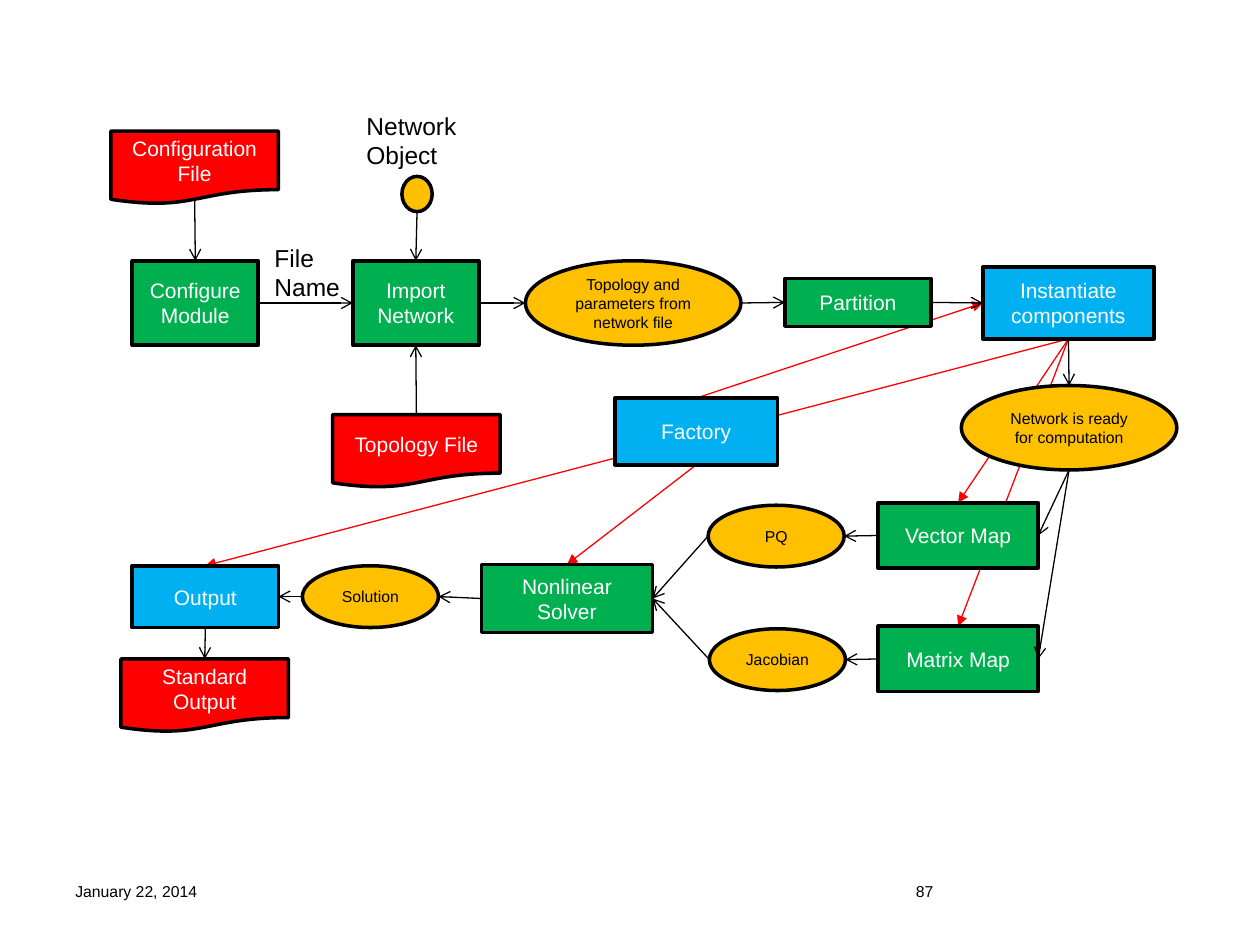
from dataclasses import dataclass
from typing import NamedTuple

from lxml import etree
from pptx import Presentation
from pptx.dml.color import RGBColor
from pptx.enum import shapes, text
from pptx.oxml import ns
from pptx.util import Inches, Pt


@dataclass(frozen=True)
class Theme:
    font: str = "Arial"
    black: str = "000000"
    white: str = "FFFFFF"
    red: str = "FF0000"
    green: str = "00B050"
    blue: str = "00B0F0"
    amber: str = "FFC000"
    label_size: int = 14
    node_size: int = 12
    small_size: int = 9
    outline: float = 2
    arrow: float = 0.75


THEME = Theme()
KIND = shapes.MSO_SHAPE


class Style(NamedTuple):
    shape: KIND
    fill: str
    color: str
    size: int


class Node(NamedTuple):
    style: Style
    label: str
    left: float
    top: float
    width: float
    height: float

    def side(self, name: str) -> tuple[float, float]:
        bottom = 0.94 if self.style.shape == KIND.FLOWCHART_DOCUMENT else 1
        across, down = {"top": (0.5, 0), "left": (0, 0.5),
                        "bottom": (0.5, bottom), "right": (1, 0.5)}[name]
        return self.left + across * self.width, self.top + down * self.height


class Link(NamedTuple):
    source: str
    source_side: str
    target: str
    target_side: str


class Label(NamedTuple):
    lines: tuple[str, ...]
    left: float
    top: float
    width: float
    height: float
    size: int
    wrap: bool = True


FILE = Style(KIND.FLOWCHART_DOCUMENT, THEME.red, THEME.white, THEME.node_size)
PROCESS = Style(KIND.FLOWCHART_PROCESS, THEME.green, THEME.white, THEME.node_size)
STEP = Style(KIND.RECTANGLE, THEME.green, THEME.white, THEME.node_size)
FACTORY = Style(KIND.RECTANGLE, THEME.blue, THEME.white, THEME.node_size)
STATE = Style(KIND.OVAL, THEME.amber, THEME.black, THEME.small_size)

FILE_BOX = (1.33, 0.58)
PROCESS_BOX = (1, 0.67)
MAP_BOX = (1.27, 0.52)
WIDE_OVAL = (1.71, 0.67)
OVAL = (1.08, 0.49)

NODES = {
    "config file": Node(FILE, "Configuration File", 0.88, 1.04, *FILE_BOX),
    "topology file": Node(FILE, "Topology File", 2.64, 3.29, *FILE_BOX),
    "configure": Node(PROCESS, "Configure Module", 1.05, 2.07, *PROCESS_BOX),
    "import": Node(PROCESS, "Import Network", 2.8, 2.07, *PROCESS_BOX),
    "network object": Node(STATE, "", 3.19, 1.4, 0.24, 0.28),
    "topology": Node(STATE, "Topology and parameters from network file",
                     4.17, 2.07, *WIDE_OVAL),
    "instantiate": Node(FACTORY, "Instantiate components", 7.8, 2.12, 1.36, 0.57),
    "ready": Node(STATE, "Network is ready for computation", 7.63, 3.06, *WIDE_OVAL),
    "partition": Node(STEP, "Partition", 6.23, 2.21, 1.16, 0.38),
    "vector map": Node(STEP, "Vector Map", 6.97, 3.99, *MAP_BOX),
    "matrix map": Node(STEP, "Matrix Map", 6.97, 4.97, *MAP_BOX),
    "pq": Node(STATE, "PQ", 5.62, 4.01, *OVAL),
    "jacobian": Node(STATE, "Jacobian", 5.63, 4.99, *OVAL),
    "solver": Node(STEP, "Nonlinear Solver", 3.82, 4.48, 1.36, 0.54),
    "solution": Node(STATE, "Solution", 2.4, 4.49, *OVAL),
    "factory": Node(FACTORY, "Factory", 4.88, 3.16, 1.29, 0.53),
    "output": Node(FACTORY, "Output", 1.05, 4.49, 1.16, 0.49),
    "standard output": Node(FILE, "Standard Output", 0.96, 5.23, *FILE_BOX),
}

FACTORY_LINKS = [
    Link("instantiate", "bottom", "output", "top"),
    Link("factory", "top", "instantiate", "left"),
    Link("instantiate", "bottom", "vector map", "top"),
    Link("instantiate", "bottom", "matrix map", "top"),
    Link("factory", "bottom", "solver", "top"),
]

FLOW_LINKS = [
    Link("config file", "bottom", "configure", "top"),
    Link("configure", "right", "import", "left"),
    Link("topology file", "top", "import", "bottom"),
    Link("network object", "bottom", "import", "top"),
    Link("import", "right", "topology", "left"),
    Link("topology", "right", "partition", "left"),
    Link("partition", "right", "instantiate", "left"),
    Link("instantiate", "bottom", "ready", "top"),
    Link("ready", "bottom", "vector map", "right"),
    Link("ready", "bottom", "matrix map", "right"),
    Link("vector map", "left", "pq", "right"),
    Link("matrix map", "left", "jacobian", "right"),
    Link("pq", "left", "solver", "right"),
    Link("jacobian", "left", "solver", "right"),
    Link("solver", "left", "solution", "right"),
    Link("solution", "left", "output", "right"),
    Link("output", "bottom", "standard output", "top"),
]

LABELS = [
    Label(("File", "Name"), 2.08, 1.88, 0.74, 0.57, THEME.label_size, False),
    Label(("Network Object",), 2.81, 0.83, 1.03, 0.57, THEME.label_size),
    Label(("January 22, 2014",), 0.5, 6.95, 2.33, 0.4, THEME.small_size),
    Label(("87",), 7.17, 6.95, 2.33, 0.4, THEME.small_size),
]


def style_paragraph(paragraph, size: int, color: str) -> None:
    paragraph.font.name = THEME.font
    paragraph.font.size = Pt(size)
    paragraph.font.color.rgb = RGBColor.from_string(color)


def draw_node(slide, node: Node) -> None:
    shape = slide.shapes.add_shape(
        node.style.shape, Inches(node.left), Inches(node.top),
        Inches(node.width), Inches(node.height))
    shape.shadow.inherit = False
    shape.fill.solid()
    shape.fill.fore_color.rgb = RGBColor.from_string(node.style.fill)
    shape.line.color.rgb = RGBColor.from_string(THEME.black)
    shape.line.width = Pt(THEME.outline)
    if node.label:
        frame = shape.text_frame
        frame.word_wrap = True
        frame.vertical_anchor = text.MSO_ANCHOR.MIDDLE
        paragraph = frame.paragraphs[0]
        paragraph.text = node.label
        paragraph.alignment = text.PP_ALIGN.CENTER
        style_paragraph(paragraph, node.style.size, node.style.color)


def draw_link(slide, link: Link, color: str, head: str) -> None:
    start = NODES[link.source].side(link.source_side)
    end = NODES[link.target].side(link.target_side)
    connector = slide.shapes.add_connector(
        shapes.MSO_CONNECTOR.STRAIGHT, *map(Inches, start + end))
    connector.line.color.rgb = RGBColor.from_string(color)
    connector.line.width = Pt(THEME.arrow)
    properties = connector._element.spPr
    etree.SubElement(properties.find(ns.qn("a:ln")), ns.qn("a:tailEnd"), type=head)
    etree.SubElement(properties, ns.qn("a:effectLst"))


def draw_label(slide, label: Label) -> None:
    box = slide.shapes.add_textbox(Inches(label.left), Inches(label.top),
                                   Inches(label.width), Inches(label.height))
    frame = box.text_frame
    frame.word_wrap = label.wrap
    frame.text = "\n".join(label.lines)
    for paragraph in frame.paragraphs:
        style_paragraph(paragraph, label.size, THEME.black)


def main() -> None:
    presentation = Presentation()
    presentation.slide_width, presentation.slide_height = Inches(10), Inches(7.5)
    slide = presentation.slides.add_slide(presentation.slide_layouts[6])
    for link in FACTORY_LINKS:
        draw_link(slide, link, THEME.red, "triangle")
    for node in NODES.values():
        draw_node(slide, node)
    for link in FLOW_LINKS:
        draw_link(slide, link, THEME.black, "arrow")
    for label in LABELS:
        draw_label(slide, label)
    presentation.save("out.pptx")


if __name__ == "__main__":
    main()
